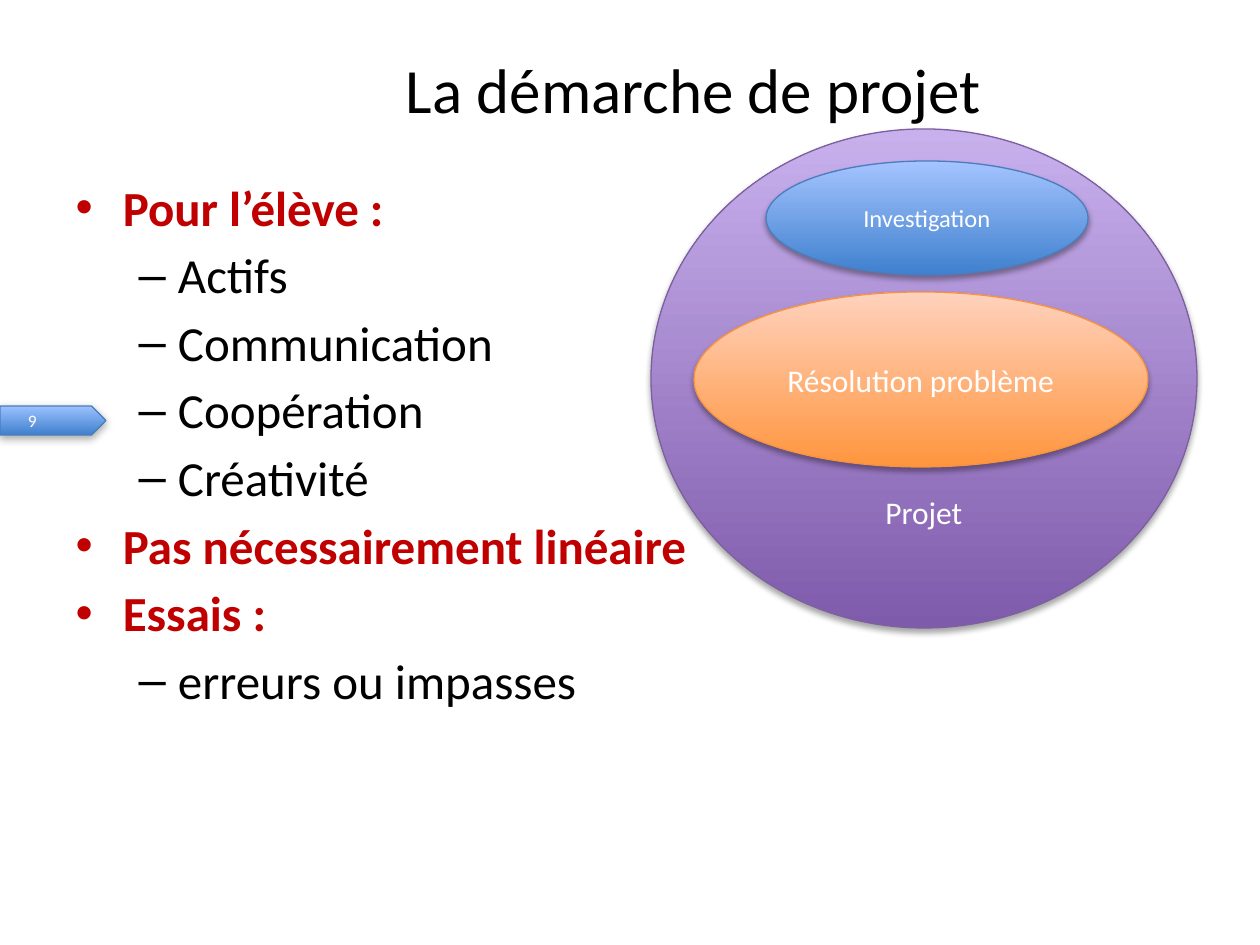
from dataclasses import dataclass

from lxml import etree
from pptx import Presentation
from pptx.dml.color import RGBColor
from pptx.enum.shapes import MSO_SHAPE
from pptx.enum.text import MSO_ANCHOR, MSO_AUTO_SIZE, PP_ALIGN
from pptx.oxml.ns import qn
from pptx.util import Pt

ELLIPSE = MSO_SHAPE.OVAL
PENTAGON = MSO_SHAPE.PENTAGON
MIDDLE = MSO_ANCHOR.MIDDLE
BOTTOM = MSO_ANCHOR.BOTTOM
TOP = MSO_ANCHOR.TOP
LEFT = PP_ALIGN.LEFT
CENTER = PP_ALIGN.CENTER
NO_FIT = MSO_AUTO_SIZE.NONE

EMU_PER_PX = 914400 / 126
FONT = "Calibri"
COLORS = {
    "black": "000000",
    "white": "FFFFFF",
    "red": "C00000",
    "tag_dark": "3F80CD",
    "tag_light": "9BC1FF",
    "tag_line": "4A7EBB",
    "purple_dark": "7F5BAB",
    "purple_light": "C8B0ED",
    "purple_line": "7D60A0",
    "orange_dark": "FF953E",
    "orange_light": "FFD2BD",
    "orange_line": "F69240",
    "blue_dark": "3F80CE",
    "blue_light": "A4C4FF",
    "blue_line": "4B7EBC",
}


@dataclass
class Bubble:
    text: str
    box: tuple[int, int, int, int]
    hue: str
    size: int = 18
    shape: int = ELLIPSE
    align: int = CENTER
    anchor: int = MIDDLE
    left_inset: int = 12
    bottom_inset: int = 6
    blur: float = 3.1


@dataclass
class Item:
    text: str
    level: int = 0


PAGE_TAG = Bubble("9", (0, 406, 106, 29), "tag", 10, PENTAGON, LEFT,
                  left_inset=28, blur=5)
BUBBLES = [
    Bubble("Projet", (651, 129, 546, 499), "purple", anchor=BOTTOM, bottom_inset=24),
    Bubble("Résolution problème", (694, 292, 454, 175), "orange"),
    Bubble("Investigation", (766, 161, 322, 114), "blue", 14),
]
ITEMS = [
    Item("Pour l’élève :"),
    Item("Actifs", 1),
    Item("Communication", 1),
    Item("Coopération", 1),
    Item("Créativité", 1),
    Item("Pas nécessairement linéaire"),
    Item("Essais :"),
    Item("erreurs ou impasses", 1),
]


def px(n: int) -> int:
    return round(n * EMU_PER_PX)


def rgb(name: str) -> RGBColor:
    return RGBColor.from_string(COLORS[name])


def place(sp, box: tuple[int, int, int, int]) -> None:
    sp.left, sp.top, sp.width, sp.height = map(px, box)


def write(p, text: str, *, size: int, color: str, bold: bool = False,
          align: int = None, level: int = 0, before: float = 0) -> None:
    p.level = level
    p.alignment = align
    p.space_before = Pt(before)
    r = p.add_run()
    r.text = text
    r.font.name = FONT
    r.font.size = Pt(size)
    r.font.bold = bold
    r.font.color.rgb = rgb(color)


def add_shadow(sp, blur: float) -> None:
    sp.shadow.inherit = False
    effects = sp._element.spPr.find(qn("a:effectLst"))
    shadow = etree.SubElement(effects, qn("a:outerShdw"), blurRad=str(Pt(blur)),
                              dist=str(Pt(1.8)), dir="5400000", rotWithShape="0")
    color = etree.SubElement(shadow, qn("a:srgbClr"), val=COLORS["black"])
    etree.SubElement(color, qn("a:alpha"), val="35000")


def draw_bubble(shapes, b: Bubble) -> None:
    sp = shapes.add_shape(b.shape, *map(px, b.box))
    sp.fill.gradient()
    sp.fill.gradient_angle = 90
    for stop, tone in zip(sp.fill.gradient_stops, ("dark", "light")):
        stop.color.rgb = rgb(f"{b.hue}_{tone}")
    sp.line.color.rgb = rgb(f"{b.hue}_line")
    sp.line.width = Pt(0.75)
    add_shadow(sp, b.blur)
    tf = sp.text_frame
    tf.word_wrap = True
    tf.vertical_anchor = b.anchor
    tf.margin_left = px(b.left_inset)
    tf.margin_bottom = px(b.bottom_inset)
    write(tf.paragraphs[0], b.text, size=b.size, color="white", align=b.align)


def draw_list(sp, items: list[Item]) -> None:
    place(sp, (63, 171, 1134, 673))
    tf = sp.text_frame
    tf.auto_size = NO_FIT
    tf.vertical_anchor = TOP
    for i, item in enumerate(items):
        p = tf.add_paragraph() if i else tf.paragraphs[0]
        heading = item.level == 0
        write(p, item.text, size=28, color="red" if heading else "black",
              bold=heading, level=item.level, before=5 if i else 0)


def main() -> None:
    prs = Presentation()
    prs.slide_width, prs.slide_height = px(1260), px(945)
    s = prs.slides.add_slide(prs.slide_layouts[1])

    title = s.shapes.title
    place(title, (190, 5, 1007, 166))
    title.text_frame.auto_size = NO_FIT
    title.text_frame.vertical_anchor = MIDDLE
    write(title.text_frame.paragraphs[0], "La démarche de projet",
          size=36, color="black", align=CENTER)

    draw_list(s.placeholders[1], ITEMS)
    draw_bubble(s.shapes, PAGE_TAG)
    group = s.shapes.add_group_shape()
    for b in BUBBLES:
        draw_bubble(group.shapes, b)
    prs.save("out.pptx")


if __name__ == "__main__":
    main()
